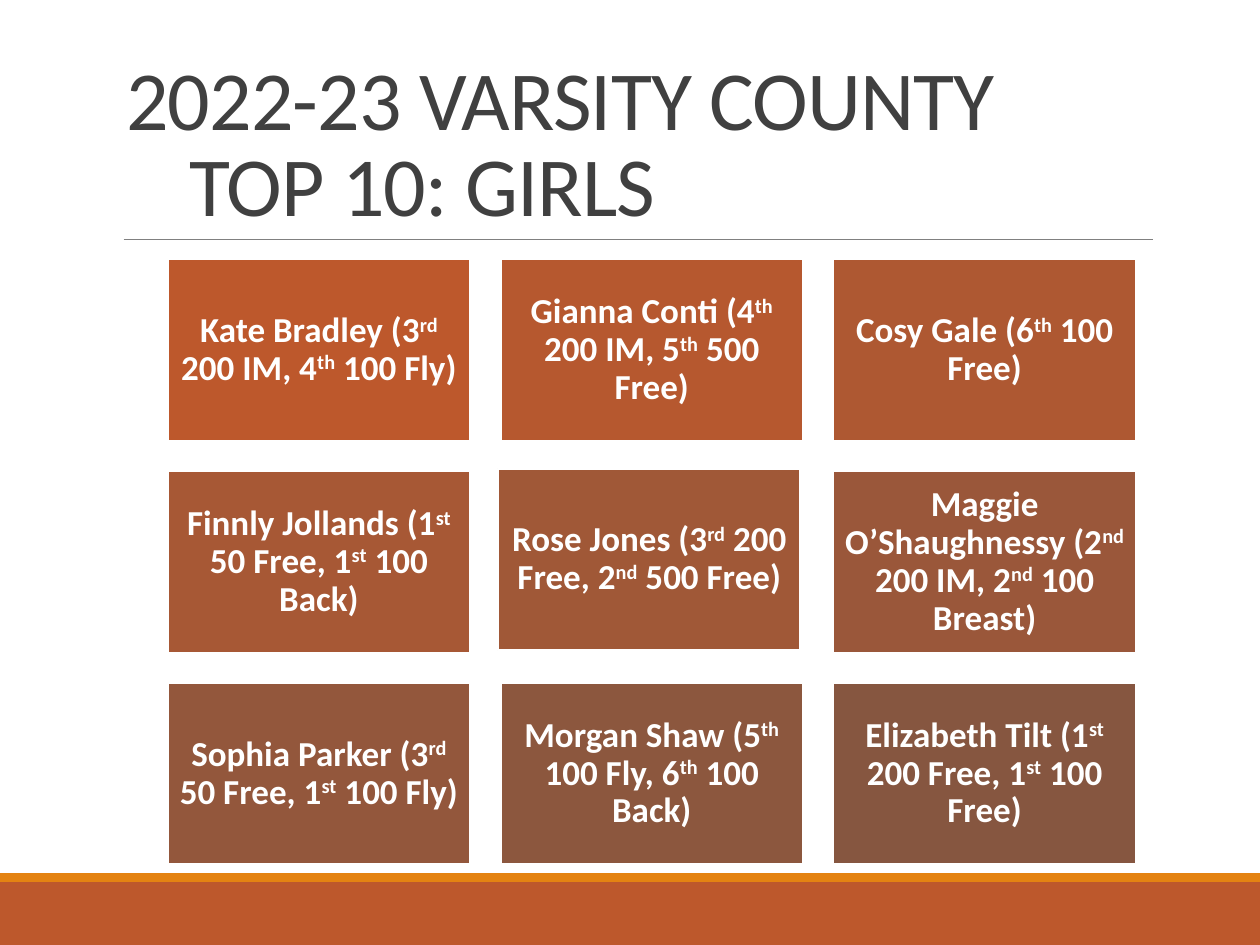
from lxml import etree
from pptx import Presentation
from pptx.dml.color import RGBColor
from pptx.enum.shapes import MSO_CONNECTOR, MSO_SHAPE
from pptx.enum.text import MSO_ANCHOR, MSO_AUTO_SIZE, PP_ALIGN
from pptx.oxml.ns import qn
from pptx.util import Cm, Pt

RECTANGLE = MSO_SHAPE.RECTANGLE
STRAIGHT = MSO_CONNECTOR.STRAIGHT
TITLE_ONLY = 5
FONT = "Calibri"

TITLE = "2022-23 VARSITY COUNTY \v\tTOP 10: GIRLS"
SWIMMERS = [
    ("Kate Bradley (3^rd^ 200 IM, 4^th^ 100 Fly)", "BD582C"),
    ("Gianna Conti (4^th^ 200 IM, 5^th^ 500 Free)", "B6582F"),
    ("Cosy Gale (6^th^ 100 Free)", "AE5832"),
    ("Finnly Jollands (1^st^ 50 Free, 1^st^ 100 Back)", "A75835"),
    ("Rose Jones (3^rd^ 200 Free, 2^nd^ 500 Free)", "A05837"),
    ("Maggie O’Shaughnessy (2^nd^ 200 IM, 2^nd^ 100 Breast)", "9A573A"),
    ("Sophia Parker (3^rd^ 50 Free, 1^st^ 100 Fly)", "93573C"),
    ("Morgan Shaw (5^th^ 100 Fly, 6^th^ 100 Back)", "8C573E"),
    ("Elizabeth Tilt (1^st^ 200 Free, 1^st^ 100 Free)", "865640"),
]
BANDS = [(17.78, 1.27, "BD582C"), (17.6, 0.18, "E48312")]
COLUMNS = 3
GRID_LEFT, GRID_TOP = 3.38, 5.23
CARD_WIDTH, CARD_HEIGHT, GAP = 6.1, 3.66, 0.61
NUDGED_CARD, NUDGE = 4, -0.05


def color(hex_code):
    return RGBColor.from_string(hex_code)


def style_run(run, size, hex_code, bold=False):
    run.font.name = FONT
    run.font.size = Pt(size)
    run.font.bold = bold
    run.font.color.rgb = color(hex_code)


def add_rectangle(slide, left, top, width, height, fill):
    shape = slide.shapes.add_shape(RECTANGLE, Cm(left), Cm(top), Cm(width), Cm(height))
    shape.shadow.inherit = False
    shape.fill.solid()
    shape.fill.fore_color.rgb = color(fill)
    shape.line.fill.background()
    return shape


def add_title(slide):
    title = slide.shapes.title
    title.left, title.top, title.width, title.height = Cm(2.29), Cm(0.79), Cm(20.95), Cm(4.04)
    frame = title.text_frame
    frame.text = TITLE
    frame.word_wrap = True
    frame.auto_size = MSO_AUTO_SIZE.NONE
    frame.vertical_anchor = MSO_ANCHOR.BOTTOM
    paragraph = frame.paragraphs[0]
    paragraph.alignment = PP_ALIGN.LEFT
    paragraph.line_spacing = 0.85
    for run in paragraph.runs:
        style_run(run, 48, "404040")
        run._r.get_or_add_rPr().set("spc", "-50")


def add_rule(slide):
    rule = slide.shapes.add_connector(STRAIGHT, Cm(2.49), Cm(4.83), Cm(23.24), Cm(4.83))
    rule.line.color.rgb = color("808080")
    rule.line.width = Pt(0.5)
    etree.SubElement(rule._element.spPr, qn("a:effectLst"))


def add_card(slide, index, text, fill):
    row, column = divmod(index, COLUMNS)
    shift = NUDGE if index == NUDGED_CARD else 0
    left = GRID_LEFT + column * (CARD_WIDTH + GAP) + shift
    top = GRID_TOP + row * (CARD_HEIGHT + GAP) + shift
    card = add_rectangle(slide, left, top, CARD_WIDTH, CARD_HEIGHT, fill)
    card.line.color.rgb = color("FFFFFF")
    card.line.width = Pt(1.25)
    frame = card.text_frame
    frame.word_wrap = True
    frame.vertical_anchor = MSO_ANCHOR.MIDDLE
    frame.margin_left = frame.margin_right = frame.margin_top = frame.margin_bottom = Cm(0.2)
    paragraph = frame.paragraphs[0]
    paragraph.alignment = PP_ALIGN.CENTER
    paragraph.line_spacing = 0.9
    for position, part in enumerate(text.split("^")):
        run = paragraph.add_run()
        run.text = part
        style_run(run, 20, "FFFFFF", bold=True)
        if position % 2:
            run._r.get_or_add_rPr().set("baseline", "30000")


def main():
    """Build the slide of girls in the county top ten."""
    presentation = Presentation()
    presentation.slide_width, presentation.slide_height = Cm(25.4), Cm(19.05)
    slide = presentation.slides.add_slide(presentation.slide_layouts[TITLE_ONLY])
    for top, height, fill in BANDS:
        add_rectangle(slide, 0, top, 25.4, height, fill)
    add_rule(slide)
    add_title(slide)
    for index, (text, fill) in enumerate(SWIMMERS):
        add_card(slide, index, text, fill)
    presentation.save("out.pptx")


if __name__ == "__main__":
    main()
